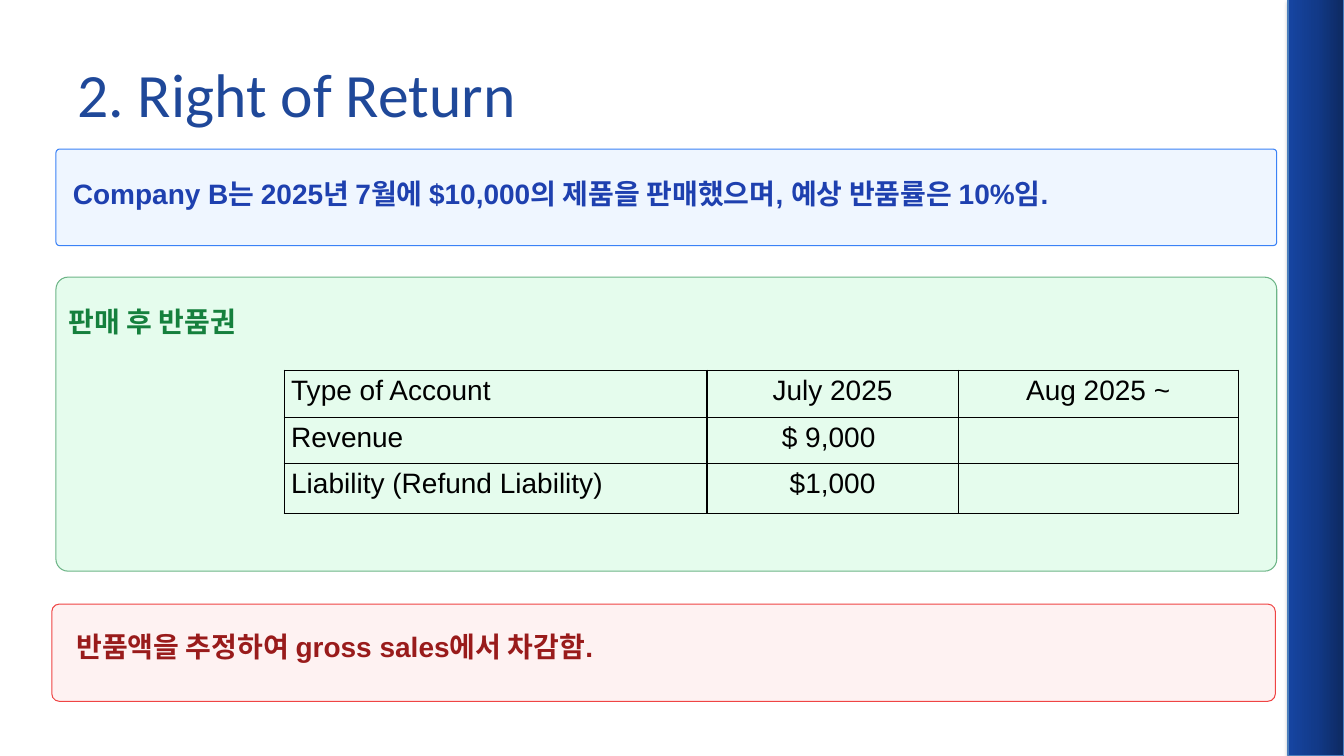
from copy import deepcopy

from lxml.etree import SubElement
from pptx import Presentation
from pptx.dml.color import RGBColor as RGB
from pptx.enum.shapes import MSO_SHAPE as SHAPE
from pptx.enum.text import MSO_ANCHOR as ANCHOR, PP_ALIGN as ALIGN
from pptx.oxml import parse_xml
from pptx.oxml.ns import nsdecls, qn
from pptx.util import Pt

HUES = {
    "title": "1F4899", "ink": "000000", "edge": "4B7EBC",
    "dark": "0D2960", "mid": "123A89", "light": "1645A2",
    "blue": "EFF6FF", "blue line": "3B82F6", "blue text": "1E40AF",
    "green": "E5FCED", "green line": "6DB587", "green text": "15803D",
    "red": "FEF2F2", "red line": "EF4444", "red text": "991B1B",
}


class Deck:
    face = "Arial"
    size = 20

    def __init__(self, wide, high):
        self.file = Presentation()
        self.file.slide_width, self.file.slide_height = Pt(wide), Pt(high)
        self.slide = self.file.slides.add_slide(self.file.slide_layouts[5])
        self.shapes = self.slide.shapes

    def style(self, para, hue, size=None, face=None, bold=False):
        font = para.font
        font.name = face or self.face
        font.size = Pt(size or self.size)
        font.bold = bold
        font.color.rgb = RGB.from_string(HUES[hue])

    def title(self, text, box):
        head = self.shapes.title
        head.left, head.top, head.width, head.height = map(Pt, box)
        frame = head.text_frame
        frame.text = text
        frame.vertical_anchor = ANCHOR.MIDDLE
        para = frame.paragraphs[0]
        para.alignment = ALIGN.LEFT
        self.style(para, "title", 44, "Calibri")

    def shape(self, kind, box, line):
        item = self.shapes.add_shape(kind, *map(Pt, box))
        item.shadow.inherit = False
        item.line.color.rgb = RGB.from_string(HUES[line])
        item.line.width = Pt(0.75)
        return item

    def bar(self, box):
        item = self.shape(SHAPE.RECTANGLE, box, "edge")
        item.fill.gradient()
        item.fill.gradient_angle = 180
        props = item._element.spPr
        stops = props.find(qn("a:gradFill")).find(qn("a:gsLst"))
        stops.insert(1, deepcopy(stops[0]))
        for stop, spot, hue in zip(stops, (0, 50, 100), ("dark", "mid", "light")):
            stop.set("pos", str(spot * 1000))
            stop.remove(stop[0])
            SubElement(stop, qn("a:srgbClr"), val=HUES[hue])
        props.find(qn("a:effectLst")).append(parse_xml(
            f'<a:outerShdw {nsdecls("a")} blurRad="{Pt(3.1)}" dist="{Pt(1.8)}" '
            'dir="5400000" rotWithShape="0"><a:srgbClr val="000000">'
            '<a:alpha val="35000"/></a:srgbClr></a:outerShdw>'))

    def panel(self, hue, box, curve):
        item = self.shape(SHAPE.ROUNDED_RECTANGLE, box, f"{hue} line")
        item.adjustments[0] = curve
        item.fill.solid()
        item.fill.fore_color.rgb = RGB.from_string(HUES[hue])

    def label(self, text, hue, box):
        frame = self.shapes.add_textbox(*map(Pt, box)).text_frame
        frame.word_wrap = True
        frame.margin_left = frame.margin_right = 0
        frame.margin_top = frame.margin_bottom = 0
        frame.text = text
        para = frame.paragraphs[0]
        para.line_spacing, para.space_after = Pt(22.4), Pt(8)
        self.style(para, f"{hue} text", bold=True)

    def cell(self, cell, text, align):
        cell.margin_left = cell.margin_right = Pt(5)
        cell.margin_top = cell.margin_bottom = 0
        cell.text = text
        para = cell.text_frame.paragraphs[0]
        para.alignment = align
        para.line_spacing, para.space_after = 1.15, Pt(10)
        self.style(para, "ink")
        props = cell._tc.get_or_add_tcPr()
        for side in "LRTB":
            edge = SubElement(props, qn(f"a:ln{side}"), w=str(Pt(1)))
            fill = SubElement(edge, qn("a:solidFill"))
            SubElement(fill, qn("a:srgbClr"), val=HUES["ink"])
        cell.fill.background()

    def table(self, rows, left, top, wides, highs):
        grid = self.shapes.add_table(
            len(highs), len(wides), Pt(left), Pt(top),
            Pt(sum(wides)), Pt(sum(highs))).table
        grid.first_row = grid.horz_banding = False
        for col, wide in zip(grid.columns, wides):
            col.width = Pt(wide)
        for row, high, texts in zip(grid.rows, highs, rows):
            row.height = Pt(high)
            for spot, text in enumerate(texts):
                self.cell(row.cells[spot], text,
                          ALIGN.CENTER if spot else ALIGN.LEFT)


def main():
    deck = Deck(960, 540)
    deck.bar((920, 0, 40, 540))
    deck.title("2. Right of Return", (48, 21.6, 864, 90))
    deck.panel("blue", (40, 106.5, 872, 69), 0.037)
    deck.label("Company B는 2025년 7월에 $10,000의 제품을 판매했으며, 예상 반품률은 10%임.",
               "blue", (52, 128, 854, 24.5))
    deck.panel("green", (40, 198, 872, 210), 0.041)
    deck.table([
        ("Type of Account", "July 2025", "Aug 2025 ~"),
        ("Revenue", "$ 9,000\u00a0", ""),
        ("Liability (Refund Liability)", "$1,000", ""),
    ], 203, 264.5, (302, 179.5, 200), (33.5, 33, 36))
    deck.label("판매 후 반품권", "green", (49, 219, 854, 24.5))
    deck.panel("red", (37, 431.5, 874, 69.5), 0.078)
    deck.label("반품액을 추정하여 gross sales에서 차감함.", "red",
               (54.5, 451.5, 846, 57.5))
    deck.file.save("out.pptx")


if __name__ == "__main__":
    main()
